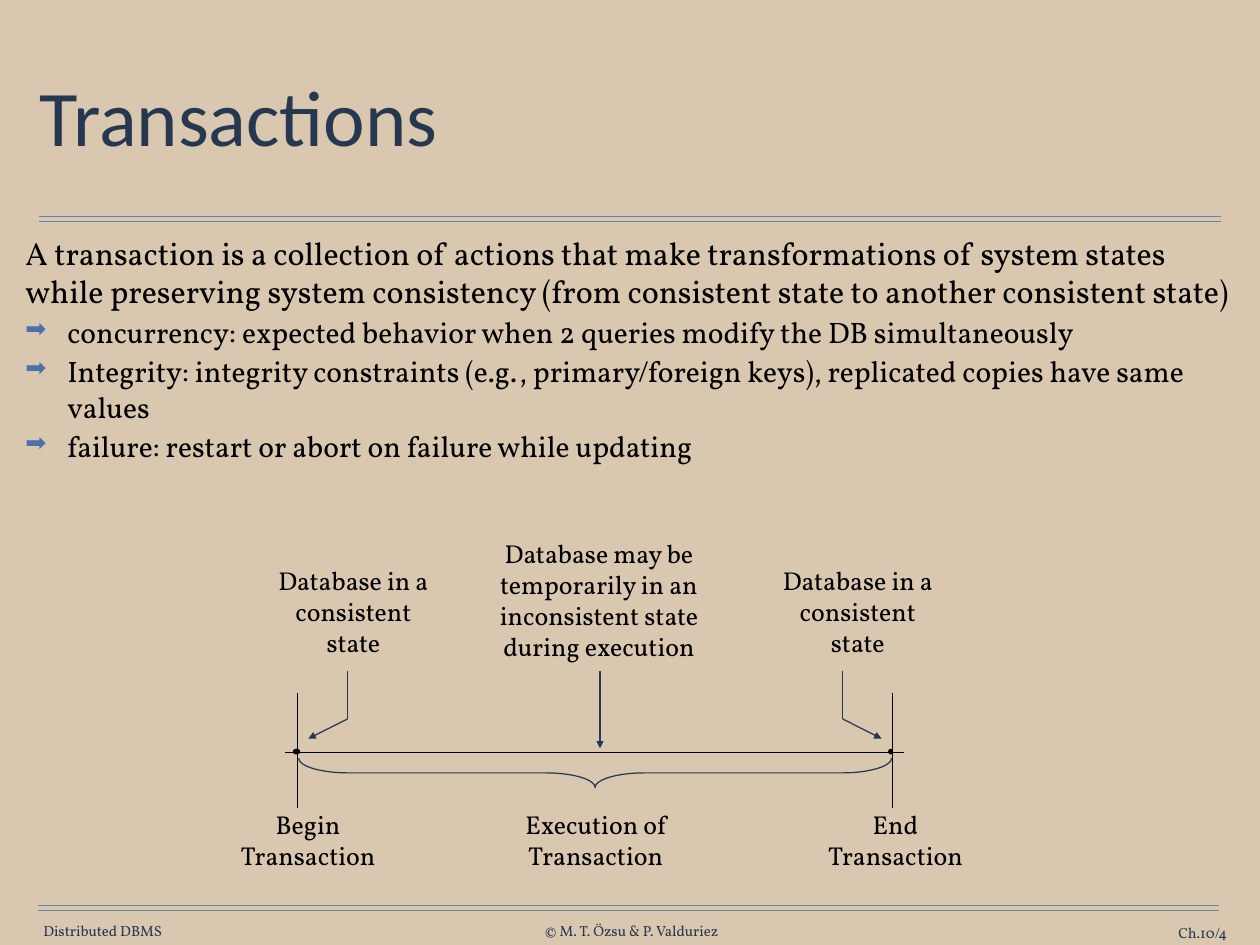
"""Build the slide on transactions, with its timeline."""
from lxml import etree
from pptx import Presentation
from pptx.dml.color import RGBColor
from pptx.enum.shapes import MSO_CONNECTOR, MSO_SHAPE
from pptx.enum.text import MSO_ANCHOR, MSO_AUTO_SIZE, PP_ALIGN
from pptx.oxml.ns import qn
from pptx.util import Cm, Pt

LINE = MSO_CONNECTOR.STRAIGHT
OVAL, BRACE = MSO_SHAPE.OVAL, MSO_SHAPE.RIGHT_BRACE
TOP, MIDDLE = MSO_ANCHOR.TOP, MSO_ANCHOR.MIDDLE
LEFT, CENTER, RIGHT = PP_ALIGN.LEFT, PP_ALIGN.CENTER, PP_ALIGN.RIGHT
FIXED = MSO_AUTO_SIZE.NONE
SAND = RGBColor(0xD9, 0xC8, 0xAF)
NAVY = RGBColor(0x26, 0x37, 0x50)
STEEL = RGBColor(0x66, 0x82, 0xAA)
BLUE = RGBColor(0x4A, 0x71, 0xA9)
BLACK = RGBColor(0, 0, 0)
SERIF, SANS = "Vollkorn", "Calibri"

TITLE = "Transactions"
INTRO = ("A transaction is a collection of actions that make transformations of "
         "system states while preserving system consistency (from consistent "
         "state to another consistent state)")
POINTS = [
    "concurrency: expected behavior when 2 queries modify the DB simultaneously",
    "Integrity: integrity constraints (e.g., primary/foreign keys), "
    "replicated copies have same values",
    "failure: restart or abort on failure while updating",
]
FOOTER = [
    ("Distributed DBMS", (1.19, 26.44, 3.51, 0.51), CENTER, False),
    ("© M. T. Özsu & P. Valduriez", (15.47, 26.44, 5.28, 0.51), CENTER, False),
    ("Ch.10/4", (31.27, 26.49, 3.91, 0.51), RIGHT, True),
]
STABLE = ["Database in a", "consistent", "state"]
LABELS = [
    (STABLE, (7.54, 16, 5.18, 3.05)),
    (["Database may be", "temporarily in an", "inconsistent state",
      "during execution"], (13.87, 15.24, 6.6, 3.96)),
    (STABLE, (22, 16, 5.18, 3.05)),
    (["Begin", "Transaction"], (6.53, 23.01, 4.6, 2.16)),
    (["Execution of", "Transaction"], (14.66, 23.01, 4.83, 2.16)),
    (["End", "Transaction"], (23.37, 23.01, 4.6, 2.16)),
]
RULES = [(1.12, 35, 6.2), (1.09, 34.95, 25.96)]
RULE_GAP = 0.15
AXIS = (8.18, 21.59, 25.91, 21.59)
TICKS = [8.53, 25.58]
DOTS = [(8.41, 21.49, 0.18, 0.13), (25.48, 21.49, 0.1, 0.13)]
BENDS = [(9.96, 8.84), (24.16, 25.27)]
STEM_TOP, BEND_Y, TIP_Y = 19.23, 20.62, 21.18


def apply(item, values):
    """Set each named value on the item."""
    for name, value in values.items():
        setattr(item, name, value)


def place(box):
    """Turn a box in centimetres into lengths."""
    return [Cm(n) for n in box]


def frame(shape, pad, anchor=TOP, wrap=True):
    """Format the text frame of a shape and return it."""
    side, edge = Cm(pad[0]), Cm(pad[1])
    text = shape.text_frame
    apply(text, {"auto_size": FIXED, "word_wrap": wrap, "vertical_anchor": anchor,
                 "margin_left": side, "margin_right": side,
                 "margin_top": edge, "margin_bottom": edge})
    return text


def write(text, lines, size, color, face=SERIF, **form):
    """Write lines as paragraphs of a text frame."""
    for i, line in enumerate(lines):
        para = text.add_paragraph() if i else text.paragraphs[0]
        apply(para, form)
        run = para.add_run()
        run.text = line
        apply(run.font, {"name": face, "size": Pt(size)})
        run.font.color.rgb = color


def bullet(para):
    """Give a paragraph a hanging arrow bullet."""
    props = para._p.get_or_add_pPr()
    props.set("marL", str(Cm(1.2)))
    props.set("indent", str(Cm(-1.2)))
    tint = etree.SubElement(props, qn("a:buClr"))
    etree.SubElement(tint, qn("a:srgbClr"), val=str(BLUE))
    etree.SubElement(props, qn("a:buSzPct"), val="85000")
    etree.SubElement(props, qn("a:buChar"), char="➡")
    para.space_before = Pt(3)


def link(slide, ends, color, arrow=False):
    """Draw a line, with an arrowhead at its end if asked."""
    line = slide.shapes.add_connector(LINE, *place(ends))
    line.line.width = Pt(1)
    line.line.color.rgb = color
    if arrow:
        etree.SubElement(line.line._get_or_add_ln(), qn("a:tailEnd"), type="triangle")
    etree.SubElement(line._element.spPr, qn("a:effectLst"))


def draw(slide, kind, box, color):
    """Draw an outlined shape without shadow and return it."""
    shape = slide.shapes.add_shape(kind, *place(box))
    shape.shadow.inherit = False
    shape.line.width = Pt(1)
    shape.line.color.rgb = color
    return shape


def main():
    """Put the slide together and save it."""
    deck = Presentation()
    apply(deck, {"slide_width": Cm(36.12), "slide_height": Cm(27.1)})
    slide = deck.slides.add_slide(deck.slide_layouts[5])
    slide.background.fill.solid()
    slide.background.fill.fore_color.rgb = SAND
    boxes = slide.shapes

    for left, right, top in RULES:
        for y in (top, top + RULE_GAP):
            link(slide, (left, y, right, y), STEEL)
    for words, box, side, wrap in FOOTER:
        text = frame(boxes.add_textbox(*place(box)), (0, 0), MIDDLE, wrap)
        write(text, [words], 12, NAVY, alignment=side)

    title = boxes.title
    apply(title, dict(zip(("left", "top", "width", "height"),
                          place((0.99, 1.24, 34.14, 4.47)))))
    write(frame(title, (0.15, 0.15), MIDDLE), [TITLE], 64, NAVY, SANS,
          alignment=LEFT, line_spacing=0.9)

    body = frame(boxes.add_textbox(*place((0.58, 6.55, 34.87, 7.9))), (0.15, 0.15))
    write(body, [INTRO, *POINTS], 24, BLACK)
    first, *rest = body.paragraphs
    first.runs[0].font.size = Pt(26)
    for para in rest:
        bullet(para)

    for lines, box in LABELS:
        text = frame(boxes.add_textbox(*place(box)), (0.36, 0.18), wrap=False)
        write(text, lines, 21, BLACK, alignment=CENTER)

    link(slide, AXIS, BLACK)
    for x in TICKS:
        link(slide, (x, 19.86, x, 23.16), BLACK)
    for box in DOTS:
        dot = draw(slide, OVAL, box, BLACK)
        dot.fill.solid()
        dot.fill.fore_color.rgb = BLACK
    link(slide, (17.2, STEM_TOP, 17.2, 21.46), NAVY, True)
    for x, tip in BENDS:
        link(slide, (x, STEM_TOP, x, BEND_Y), NAVY)
        link(slide, (x, BEND_Y, tip, TIP_Y), NAVY, True)
    brace = draw(slide, BRACE, (16.64, 13.67, 0.84, 16.99), NAVY)
    brace.fill.background()
    brace.rotation = 90
    brace.adjustments[0] = 1.69

    deck.save("out.pptx")


if __name__ == "__main__":
    main()
